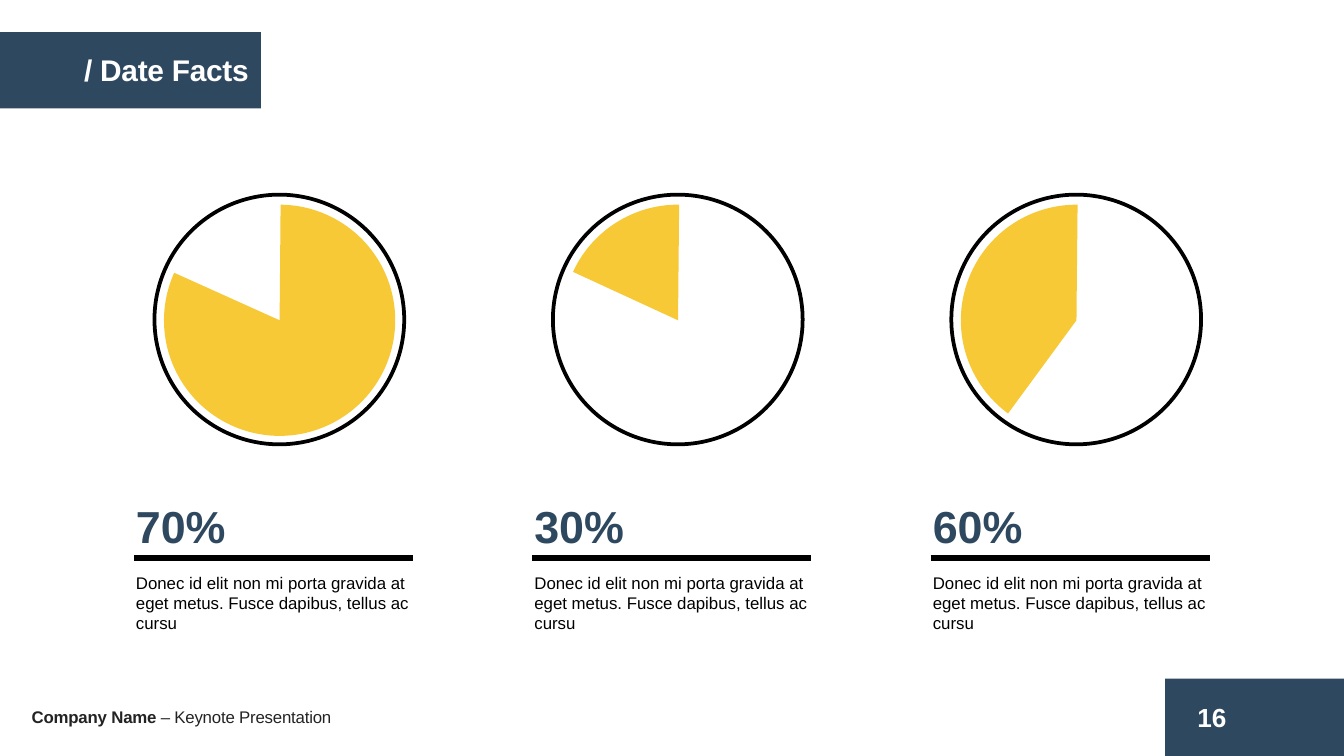
from pptx import Presentation
from pptx import util as u
from pptx.dml.color import RGBColor
from pptx.enum import shapes, text
from lxml import etree

Cm, Pt = u.Cm, u.Pt
KIND = shapes.MSO_SHAPE
HUE = {"navy": "2E4860", "gold": "F8C937", "black": "000000",
       "white": "FFFFFF", "ink": "232323"}
BODY = "Donec id elit non mi porta gravida at eget metus. Fusce dapibus, tellus ac cursu"


def draw(home, kind, box, fill=None, line=None):
    shape = home.add_shape(kind, *[Cm(n) for n in box])
    shape.shadow.inherit = False
    if fill:
        shape.fill.solid()
        shape.fill.fore_color.rgb = RGBColor.from_string(HUE[fill])
    else:
        shape.fill.background()
    if line:
        shape.line.color.rgb = RGBColor.from_string(HUE[line])
        shape.line.width = Pt(2)
    else:
        shape.line.fill.background()
    return shape


def write(box, runs, size, hue, tight=False):
    frame = slide.shapes.add_textbox(*[Cm(n) for n in box]).text_frame
    frame.word_wrap = True
    frame.auto_size = text.MSO_AUTO_SIZE.SHAPE_TO_FIT_TEXT
    for words, bold in runs:
        run = frame.paragraphs[0].add_run()
        run.text = words
        run.font.name = "Arial"
        run.font.size = Pt(size)
        run.font.bold = bold
        run.font.color.rgb = RGBColor.from_string(HUE[hue])
        if tight:
            run.font._element.set("spc", "-10")


deck = Presentation()
deck.slide_width, deck.slide_height = Cm(25.4), Cm(14.29)
slide = deck.slides.add_slide(deck.slide_layouts[6])

draw(slide.shapes, KIND.RECTANGLE, (0, 0.61, 4.93, 1.44), "navy")
write((1.34, 0.86, 5.94, 0.94), [("/ Date Facts", True)], 16, "white", True)

facts = [("70%", 270.5, 204.27), ("30%", 204.73, 270.56), ("60%", 126.28, 270.56)]
for i, (share, start, end) in enumerate(facts):
    left = 2.32 + 7.53 * i
    group = slide.shapes.add_group_shape()
    pie = draw(group.shapes, KIND.PIE, (left + 0.78, 3.87, 4.37, 4.37), "gold")
    pie.adjustments[0] = start * 0.6
    pie.adjustments[1] = end * 0.6
    draw(group.shapes, KIND.OVAL, (left + 0.6, 3.68, 4.72, 4.72), line="black")

    write((left, 9.3, 2.69, 1.27), [(share, True)], 24, "navy")
    rule = slide.shapes.add_connector(
        shapes.MSO_CONNECTOR.STRAIGHT,
        Cm(left + 0.21), Cm(10.55), Cm(left + 5.48), Cm(10.55))
    rule.line.color.rgb = RGBColor.from_string(HUE["black"])
    rule.line.width = Pt(3)
    props = rule._element.spPr
    etree.SubElement(props, "{http://schemas.openxmlformats.org/drawingml/2006/main}effectLst")
    write((left, 10.7, 5.77, 1.42), [(BODY, False)], 9, "black")

write((0.35, 13.23, 8.2, 0.64),
      [("Company Name ", True), ("– Keynote Presentation", False)], 9, "ink", True)
draw(slide.shapes, KIND.RECTANGLE, (22.02, 12.83, 3.38, 1.46), "navy")
write((22.38, 13.13, 1.27, 0.86), [("16", True)], 14, "white")

deck.save("out.pptx")
